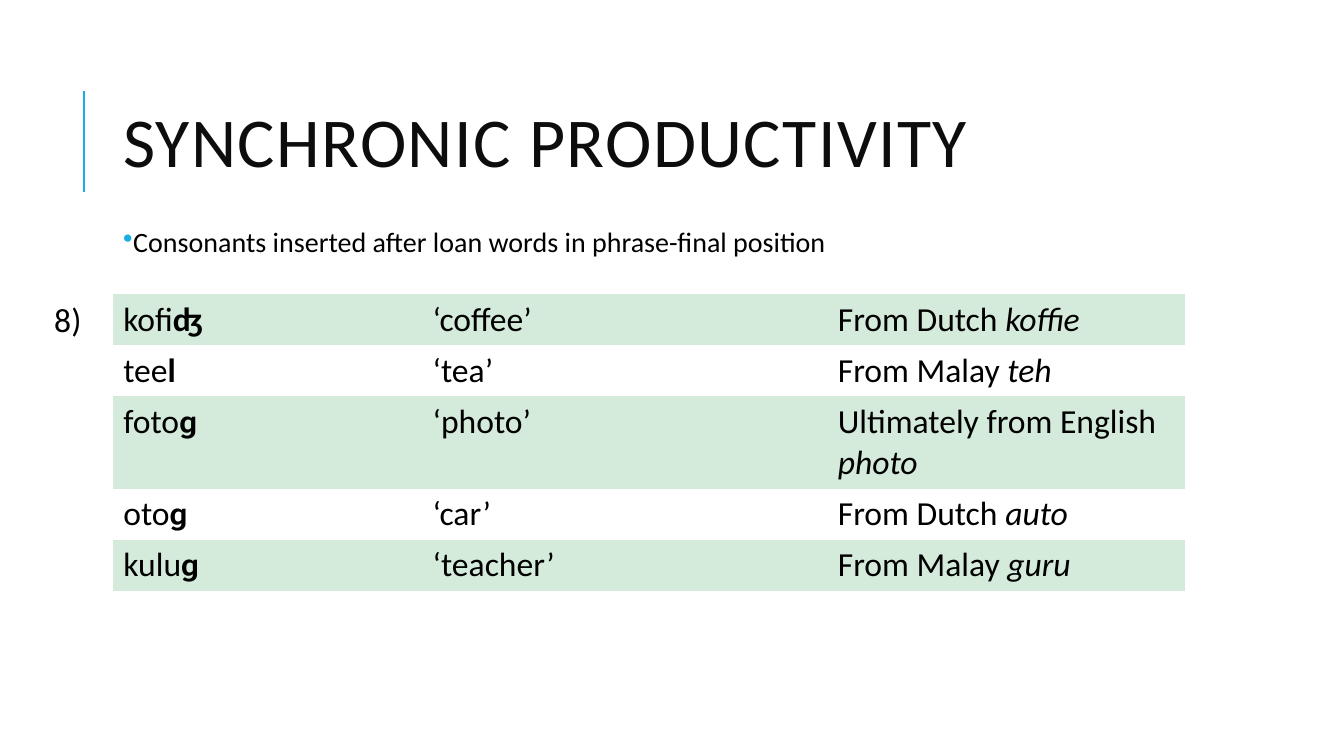
import dataclasses

import lxml.etree
import pptx
import pptx.dml.color
import pptx.enum.shapes
import pptx.enum.text
import pptx.oxml
import pptx.oxml.ns
import pptx.util

Pt = pptx.util.Pt
RGB = pptx.dml.color.RGBColor.from_string
qn = pptx.oxml.ns.qn
Anchor = pptx.enum.text.MSO_ANCHOR
Fit = pptx.enum.text.MSO_AUTO_SIZE


@dataclasses.dataclass(frozen=True)
class Theme:
    """Colours, font and type sizes of the slide."""

    font: str = "Calibri"
    ink: str = "000000"
    head: str = "0D0D0D"
    accent: str = "1CADE4"
    band: str = "D4EBDB"
    plain: str = "FFFFFF"
    title: int = 50
    note: int = 20
    body: int = 24
    grid: str = "{2D5ABB26-0587-4C30-8999-92F81FD0307C}"


class Page:
    """Draws each kind of element on one slide in one theme."""

    def __init__(self, deck, theme):
        self.theme = theme
        self.slide = deck.slides.add_slide(deck.slide_layouts[6])

    def runs(self, para, parts, size, color):
        for text, style in parts:
            run = para.add_run()
            run.text = text
            base = {"name": self.theme.font, "size": Pt(size)}
            for key, value in {**base, **style}.items():
                setattr(run.font, key, value)
            run.font.color.rgb = RGB(color)

    def text(self, box, words, size, color, frame=None, space=None):
        shape = self.slide.shapes.add_textbox(*map(Pt, box))
        form = {"word_wrap": True, "auto_size": Fit.NONE, **(frame or {})}
        for key, value in form.items():
            setattr(shape.text_frame, key, value)
        para = shape.text_frame.paragraphs[0]
        self.runs(para, [(words, {})], size, color)
        for key, value in (space or {}).items():
            setattr(para, key, value)
        return para

    def title(self, box, words):
        theme = self.theme
        para = self.text(box, words, theme.title, theme.head,
                         {"vertical_anchor": Anchor.MIDDLE},
                         {"line_spacing": 0.8})
        para.runs[0].font._element.set("spc", "100")

    def bullet(self, box, words):
        theme = self.theme
        para = self.text(box, words, theme.note, theme.ink)
        props = para._p.get_or_add_pPr()
        props.set("marL", str(Pt(7.2)))
        props.set("indent", str(Pt(-7.2)))
        tint = lxml.etree.SubElement(props, qn("a:buClr"))
        lxml.etree.SubElement(tint, qn("a:srgbClr"), val=theme.accent)
        lxml.etree.SubElement(props, qn("a:buChar"), char="•")
        for key, value in {"line_spacing": 0.9, "space_after": Pt(2)}.items():
            setattr(para, key, value)

    def line(self, start, end, width):
        kind = pptx.enum.shapes.MSO_CONNECTOR.STRAIGHT
        line = self.slide.shapes.add_connector(kind, *map(Pt, start + end))
        line.line.color.rgb = RGB(self.theme.accent)
        line.line.width = Pt(width)
        lxml.etree.SubElement(line._element.spPr, qn("a:effectLst"))

    def table(self, spot, widths, heights, rows):
        theme = self.theme
        box = (*spot, sum(widths), sum(heights))
        table = self.slide.shapes.add_table(
            len(rows), len(widths), *map(Pt, box)).table
        for key in ("first_row", "horz_banding"):
            setattr(table, key, False)
        table._tbl.tblPr.find(qn("a:tableStyleId")).text = theme.grid
        for col, width in zip(table.columns, widths):
            col.width = Pt(width)
        for index, (row, height) in enumerate(zip(table.rows, heights)):
            row.height = Pt(height)
            for cell, parts in zip(row.cells, rows[index]):
                cell.fill.solid()
                tone = theme.plain if index % 2 else theme.band
                cell.fill.fore_color.rgb = RGB(tone)
                para = cell.text_frame.paragraphs[0]
                self.runs(para, parts, theme.body, theme.ink)


LOANS = [
    ("kofi", "ʤ", "‘coffee’", "From Dutch ", "koffie"),
    ("tee", "l", "‘tea’", "From Malay ", "teh"),
    ("foto", "ɡ", "‘photo’", "Ultimately from English ", "photo"),
    ("oto", "ɡ", "‘car’", "From Dutch ", "auto"),
    ("kulu", "ɡ", "‘teacher’", "From Malay ", "guru"),
]


def main():
    deck = pptx.Presentation()
    deck.slide_width, deck.slide_height = Pt(960), Pt(540)
    theme = Theme()
    page = Page(deck, theme)
    left, width, top = 80.9, 765.3, 210.2
    page.line((60, 136.8), (60, 64.8), 1.5)
    page.title((left, 46.1, width, 118.1), "SYNCHRONIC PRODUCTIVITY")
    rows = [
        ([(stem, {}), (final, {"bold": True})],
         [(gloss, {})],
         [(origin, {}), (source, {"italic": True})])
        for stem, final, gloss, origin, source in LOANS
    ]
    page.table((left, top), (221, 289.4, 254.9),
               (36.5, 36.5, 65.8, 36.5, 36.5), rows)
    page.bullet((left, 159.8, width, 40.3),
                "Consonants inserted after loan words in phrase-final position")
    page.text((31.7, top, 33.8, 36), "8)", theme.body, theme.ink,
              {"word_wrap": False, "auto_size": Fit.SHAPE_TO_FIT_TEXT})
    deck.save("out.pptx")


if __name__ == "__main__":
    main()
